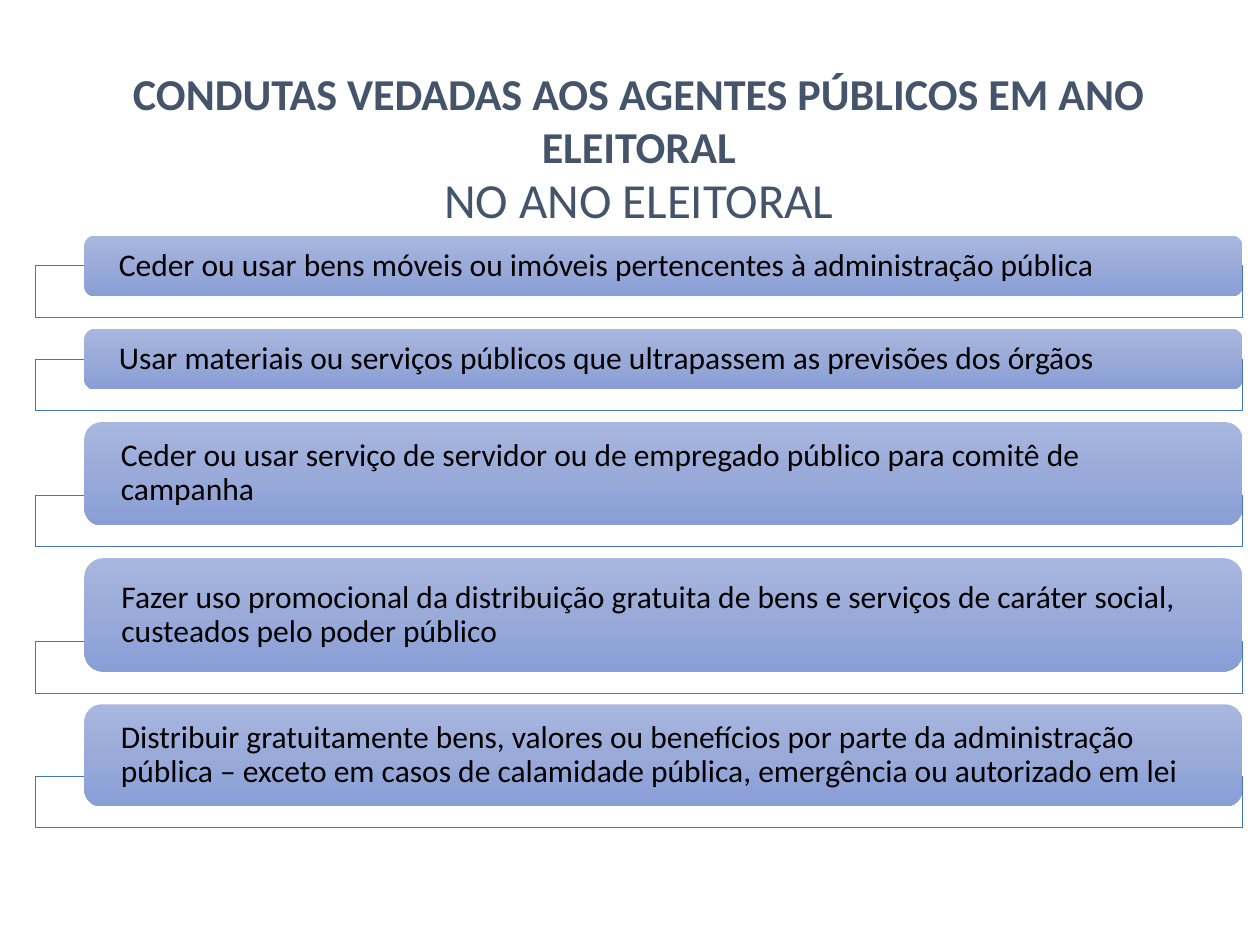
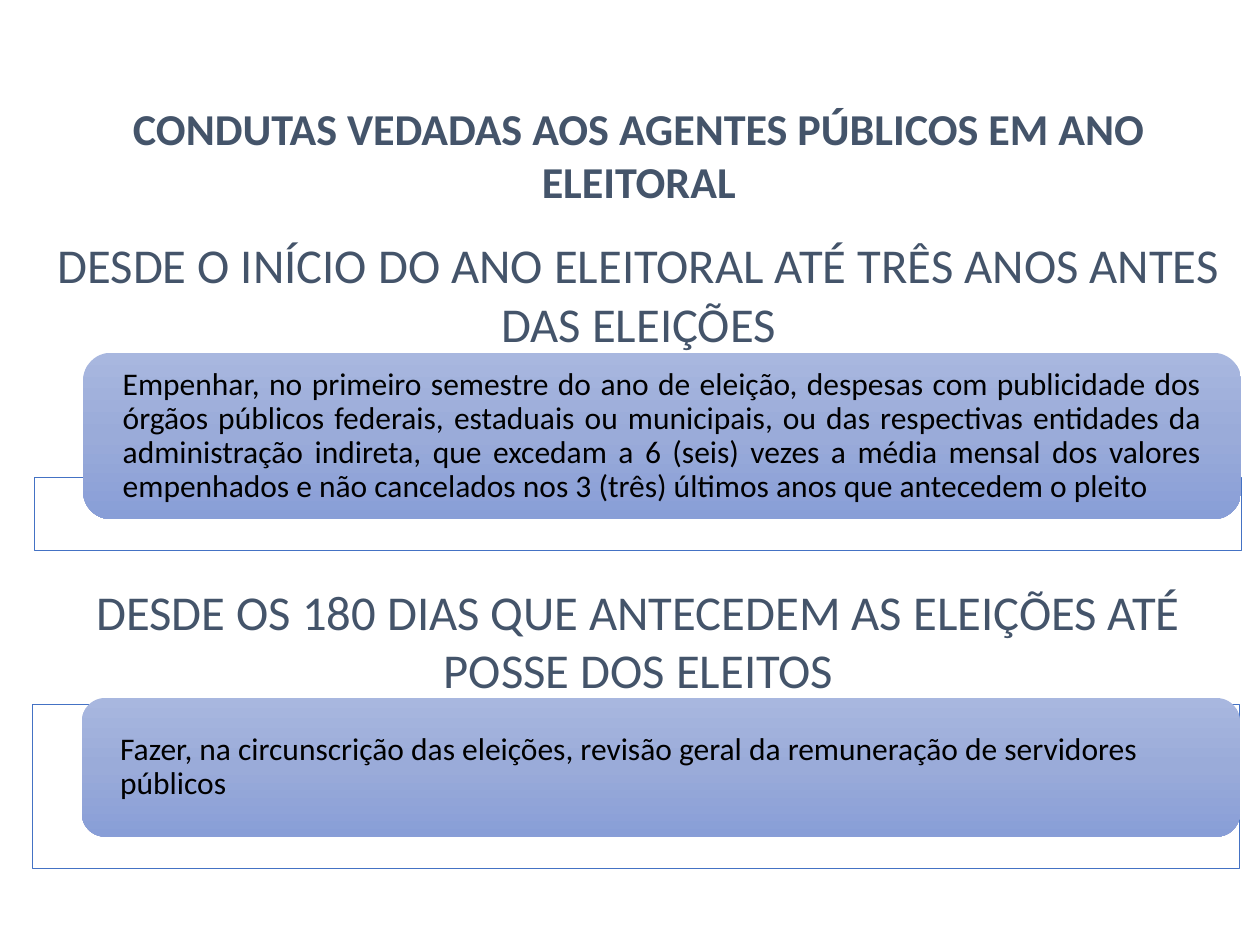
from copy import deepcopy

from lxml.etree import SubElement
from pptx import Presentation
from pptx.dml.color import RGBColor
from pptx.enum.shapes import MSO_SHAPE as Shape
from pptx.enum.text import MSO_ANCHOR as Anchor, MSO_AUTO_SIZE as AutoSize, PP_ALIGN as Align
from pptx.oxml.ns import qn
from pptx.util import Inches, Pt

SLATE = RGBColor(0x44, 0x54, 0x6A)
BLUE = RGBColor(0x44, 0x72, 0xC4)
BLACK = RGBColor(0, 0, 0)
WHITE = RGBColor(0xFF, 0xFF, 0xFF)
BAR_GRADIENT = [
    (0, RGBColor(0xA8, 0xB7, 0xDF)),
    (0.5, RGBColor(0x9A, 0xAB, 0xD9)),
    (1, RGBColor(0x88, 0x9E, 0xD7)),
]
FONT = "Calibri"

prs = Presentation()
prs.slide_width, prs.slide_height = Inches(10), Inches(7.5)

# Lengths are counted in thousandths of the slide's width.
UNIT = prs.slide_width // 1000
MARGIN, CONTENT_WIDTH = 28 * UNIT, 958 * UNIT
BAR_INDENT = 39 * UNIT
BAR_WIDTH = CONTENT_WIDTH - BAR_INDENT
BAR_INSET = 25 * UNIT
TITLE_HEIGHT = 79 * UNIT
HEADING_HEIGHT = 94 * UNIT


def write(shape, text, size, color=SLATE, bold=False, align=Align.CENTER, spacing=1.0, inset=None):
    frame = shape.text_frame
    frame.word_wrap = True
    frame.auto_size = AutoSize.NONE
    frame.vertical_anchor = Anchor.MIDDLE
    if inset is not None:
        frame.margin_left = frame.margin_right = inset
        frame.margin_top = frame.margin_bottom = 0
    frame.text = text
    paragraph = frame.paragraphs[0]
    paragraph.alignment = align
    paragraph.line_spacing = spacing
    font = paragraph.runs[0].font
    font.name, font.size, font.bold = FONT, Pt(size), bold
    font.color.rgb = color


def add_conduct(slide, text, top, height, frame_overlap, frame_height, left=MARGIN, align=Align.LEFT):
    """Draw a gradient bar over an outlined frame that starts frame_overlap above the bar's bottom."""
    frame = slide.shapes.add_shape(
        Shape.RECTANGLE, left, top + height - frame_overlap, CONTENT_WIDTH, frame_height)
    frame.shadow.inherit = False
    frame.fill.solid()
    frame.fill.fore_color.rgb = WHITE
    SubElement(next(frame._element.spPr.iter(qn("a:srgbClr"))), qn("a:alpha"), val="90000")
    frame.line.color.rgb = BLUE
    frame.line.width = Pt(0.5)

    bar = slide.shapes.add_shape(
        Shape.ROUNDED_RECTANGLE, left + BAR_INDENT, top, BAR_WIDTH, height)
    bar.shadow.inherit = False
    bar.line.fill.background()
    bar.fill.gradient()
    bar.fill.gradient_angle = 270
    stop_list = next(bar._element.spPr.iter(qn("a:gsLst")))
    stop_list.insert(1, deepcopy(stop_list[0]))
    for stop, (position, color) in zip(bar.fill.gradient_stops, BAR_GRADIENT):
        stop.position = position
        stop.color.rgb = color
    write(bar, text, 18, BLACK, align=align, spacing=0.9, inset=BAR_INSET)


# Both slides carry the same title, at different heights
title_only = prs.slide_layouts[5]
slides = []
for title_top in (55, 83):
    slide = prs.slides.add_slide(title_only)
    title = slide.shapes.title
    title.left, title.top = MARGIN, title_top * UNIT
    title.width, title.height = CONTENT_WIDTH, TITLE_HEIGHT
    write(title, "CONDUTAS VEDADAS AOS AGENTES PÚBLICOS EM ANO ELEITORAL", 25.2, bold=True)
    slides.append(slide)
election_year, periods = slides

# Slide 1: conducts forbidden during the election year
subtitle = election_year.shapes.add_textbox(MARGIN, 118 * UNIT, CONTENT_WIDTH, TITLE_HEIGHT)
write(subtitle, "NO ANO ELEITORAL", 28)

year_conducts = [
    ("Ceder ou usar bens móveis ou imóveis pertencentes à administração pública", 48),
    ("Usar materiais ou serviços públicos que ultrapassem as previsões dos órgãos", 48),
    ("Ceder ou usar serviço de servidor ou de empregado público para comitê de campanha", 82),
    ("Fazer uso promocional da distribuição gratuita de bens e serviços de caráter social, "
     "custeados pelo poder público", 90),
    ("Distribuir gratuitamente bens, valores ou benefícios por parte da administração pública "
     "– exceto em casos de calamidade pública, emergência ou autorizado em lei", 81),
]
BAR_GAP = 26 * UNIT
bar_top = 187 * UNIT
for conduct, rows in year_conducts:
    bar_height = rows * UNIT
    add_conduct(election_year, conduct, bar_top, bar_height, 24 * UNIT, 41 * UNIT)
    bar_top += bar_height + BAR_GAP

# Slide 2: conducts forbidden in two periods, each under its heading
add_conduct(
    periods,
    "Empenhar, no primeiro semestre do ano de eleição, despesas com publicidade dos órgãos "
    "públicos federais, estaduais ou municipais, ou das respectivas entidades da administração "
    "indireta, que excedam a 6 (seis) vezes a média mensal dos valores empenhados e não "
    "cancelados nos 3 (três) últimos anos que antecedem o pleito",
    280 * UNIT, 132 * UNIT, 33 * UNIT, 58 * UNIT, left=27 * UNIT, align=Align.JUSTIFY)
add_conduct(
    periods,
    "Fazer, na circunscrição das eleições, revisão geral da remuneração de servidores públicos",
    554 * UNIT, 110 * UNIT, 105 * UNIT, 130 * UNIT, left=26 * UNIT)

period_headings = [
    ("DESDE O INÍCIO DO ANO ELEITORAL ATÉ TRÊS ANOS ANTES DAS ELEIÇÕES", 186),
    ("DESDE OS 180 DIAS QUE ANTECEDEM AS ELEIÇÕES ATÉ POSSE DOS ELEITOS", 461),
]
for period, heading_top in period_headings:
    heading = periods.shapes.add_textbox(MARGIN, heading_top * UNIT, CONTENT_WIDTH, HEADING_HEIGHT)
    write(heading, period, 27.8)

prs.save("out.pptx")
